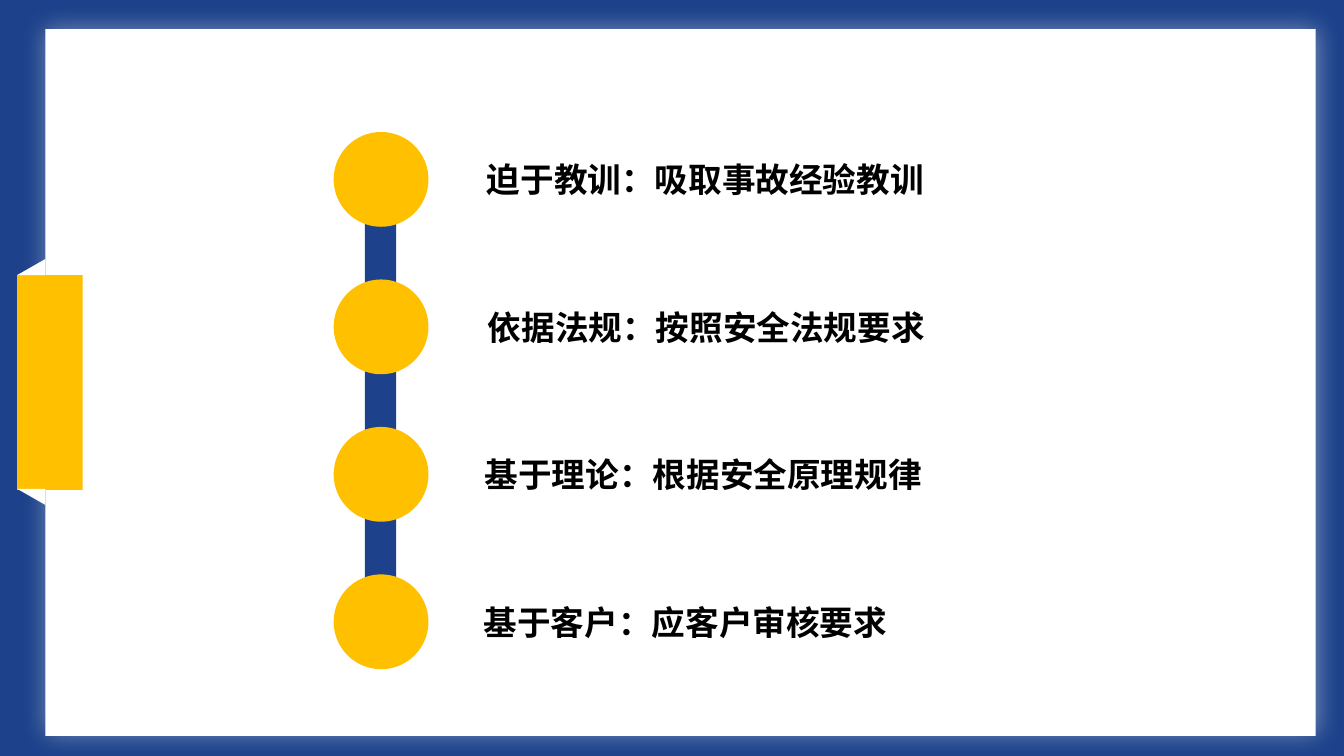
"""Build a slide with four reasons along a vertical chain of circles."""
from lxml import etree
from pptx import Presentation
from pptx.dml.color import RGBColor
from pptx.enum import shapes, text
from pptx.oxml import ns
from pptx.util import Inches, Pt

FONT = "Noto Sans CJK SC"
COLOURS = {"blue": "1D428B", "gold": "FFC000", "white": "FFFFFF", "black": "000000"}
REASONS = [
    ("迫于教训：吸取事故经验教训", 4.73, 4.79),
    ("依据法规：按照安全法规要求", 4.74, 5.1),
    ("基于理论：根据安全原理规律", 4.71, 4.96),
    ("基于客户：应客户审核要求", 4.7, 4.24),
]
FOLDS = [(2.57, ["flipH"]), (4.85, ["flipH", "flipV"])]
CIRCLE_LEFT, CIRCLE_TOP, CIRCLE_SIZE, STEP = 3.31, 1.31, 0.94, 1.463
LABEL_HEIGHT = 0.5


def colour(name):
    return RGBColor.from_string(COLOURS[name])


def add_block(page, kind, box, fill):
    block = page.shapes.add_shape(kind, *map(Inches, box))
    block.shadow.inherit = False
    block.fill.solid()
    block.fill.fore_color.rgb = colour(fill)
    block.line.fill.background()
    return block


def add_halo(block):
    effects = block.element.spPr.find(ns.qn("a:effectLst"))
    shadow = etree.SubElement(effects, ns.qn("a:outerShdw"), blurRad=str(Pt(18)),
                              dist=str(Pt(1)), dir="0", algn="ctr", rotWithShape="0")
    tint = etree.SubElement(shadow, ns.qn("a:srgbClr"), val=COLOURS["white"])
    etree.SubElement(tint, ns.qn("a:alpha"), val="40000")


def add_label(page, wording, box):
    frame = page.shapes.add_textbox(*map(Inches, box)).text_frame
    frame.word_wrap = True
    frame.auto_size = text.MSO_AUTO_SIZE.SHAPE_TO_FIT_TEXT
    frame.text = wording
    span = frame.paragraphs[0].runs[0]
    span.font.name, span.font.size, span.font.bold = FONT, Pt(24), True
    span.font.color.rgb = colour("black")
    etree.SubElement(span.font._element, ns.qn("a:ea"), typeface=FONT)


def main():
    deck = Presentation()
    deck.slide_width, deck.slide_height = Inches(13.33), Inches(7.5)
    page = deck.slides.add_slide(deck.slide_layouts[6])
    page.background.fill.solid()
    page.background.fill.fore_color.rgb = colour("blue")

    kinds = shapes.MSO_SHAPE
    add_halo(add_block(page, kinds.RECTANGLE, (0.45, 0.29, 12.6, 7.01), "white"))
    add_block(page, kinds.RECTANGLE, (0.17, 2.73, 0.65, 2.13), "gold")
    for top, flips in FOLDS:
        fold = add_block(page, kinds.RIGHT_TRIANGLE, (0.17, top, 0.28, 0.16), "white")
        for flip in flips:
            fold.element.spPr.xfrm.set(flip, "1")

    add_block(page, kinds.RECTANGLE, (3.62, 1.47, 0.31, 4.65), "blue")
    tops = [CIRCLE_TOP + STEP * row for row in range(len(REASONS))]
    for top in tops:
        add_block(page, kinds.OVAL, (CIRCLE_LEFT, top, CIRCLE_SIZE, CIRCLE_SIZE), "gold")
    for top, (wording, left, width) in zip(tops, REASONS):
        label_top = top + (CIRCLE_SIZE - LABEL_HEIGHT) / 2
        add_label(page, wording, (left, label_top, width, LABEL_HEIGHT))
    deck.save("out.pptx")


if __name__ == "__main__":
    main()
